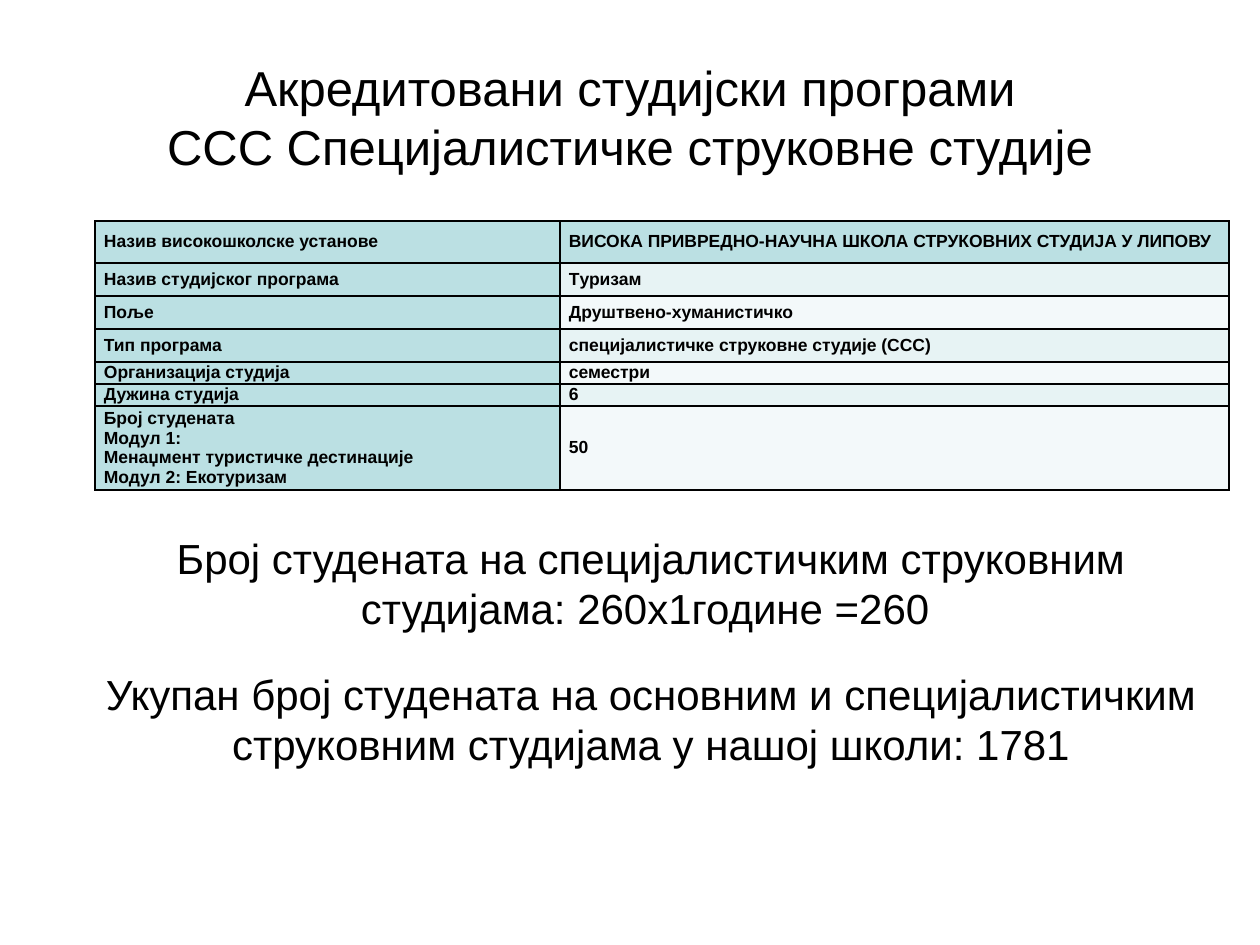
from lxml.etree import SubElement as Sub
from pptx import Presentation
from pptx.dml.color import RGBColor
from pptx.enum.text import MSO_ANCHOR as Anchor, PP_ALIGN as Align
from pptx.oxml.ns import qn
from pptx.util import Pt

PX = 914400 // 126  # EMU in one px

# Content: text, box (left, top, width, height), size
TEXTS = [
    ("Акредитовани студијски програми\vССС Специјалистичке струковне студије",
     (63, 38, 1134, 157), 28),
    ("Број студената на специјалистичким струковним студијама: 260x1године =260 ",
     (84, 504, 1134, 157), 24),
    ("Укупан број студената на основним и специјалистичким струковним "
     "студијама у нашој школи: 1781", (84, 640, 1134, 157), 24),
]

# Rows: label, value, height
ROWS = [
    ("Назив високошколске установе",
     "ВИСОКА ПРИВРЕДНО-НАУЧНА ШКОЛА СТРУКОВНИХ СТУДИЈА У ЛИПОВУ", 42),
    ("Назив студијског програма", "Tуризам", 33),
    ("Поље", "Друштвено-хуманистичко", 33),
    ("Тип програма", "специјалистичке струковне студије (ССС)", 33),
    ("Организација студија", "семестри", 22),
    ("Дужина студија", "6", 22),
    ("Број студената\nМодул 1:\nМенаџмент туристичке дестинације\n"
     "Модул 2: Екотуризам", "50", 84),
]
COLS = (465, 669)
LEFT, TOP = 95, 221
HEAD, BANDS = "BBE0E3", ("F3F9FA", "E7F3F4")
BLACK = "000000"


def rgb(code):
    return RGBColor.from_string(code)


def style(frame, size, bold=False, align=Align.LEFT):
    for para in frame.paragraphs:
        para.alignment = align
        for run in para.runs:
            font = run.font
            font.name, font.size, font.bold = "Arial", Pt(size), bold
            font.color.rgb = rgb(BLACK)


def add_text(slide, text, box, size):
    frame = slide.shapes.add_textbox(*(n * PX for n in box)).text_frame
    frame.word_wrap = True
    frame.vertical_anchor = Anchor.MIDDLE
    frame.text = text
    style(frame, size, align=Align.CENTER)


def fill_cell(cell, text, color):
    cell.text = text
    cell.vertical_anchor = Anchor.MIDDLE
    cell.margin_left = cell.margin_right = 9 * PX
    cell.margin_top = cell.margin_bottom = 0
    style(cell.text_frame, 10, bold=True)
    # Borders come before the fill in the cell's XML
    props = cell._tc.get_or_add_tcPr()
    for side in ("a:lnL", "a:lnR", "a:lnT", "a:lnB"):
        line = Sub(props, qn(side), w=str(Pt(1)))
        Sub(Sub(line, qn("a:solidFill")), qn("a:srgbClr"), val=BLACK)
    cell.fill.solid()
    cell.fill.fore_color.rgb = rgb(color)


def add_grid(slide):
    high = sum(row[2] for row in ROWS)
    box = (LEFT, TOP, sum(COLS), high)
    grid = slide.shapes.add_table(
        len(ROWS), len(COLS), *(n * PX for n in box)).table
    grid.first_row = grid.horz_banding = False
    for col, wide in zip(grid.columns, COLS):
        col.width = wide * PX
    for i, (label, value, tall) in enumerate(ROWS):
        grid.rows[i].height = tall * PX
        fill_cell(grid.cell(i, 0), label, HEAD)
        fill_cell(grid.cell(i, 1), value, BANDS[i % 2] if i else HEAD)


def main():
    deck = Presentation()
    deck.slide_width, deck.slide_height = 1260 * PX, 945 * PX
    slide = deck.slides.add_slide(deck.slide_layouts[6])
    title, *notes = TEXTS
    add_text(slide, *title)
    add_grid(slide)
    for note in notes:
        add_text(slide, *note)
    deck.save("out.pptx")


if __name__ == "__main__":
    main()
